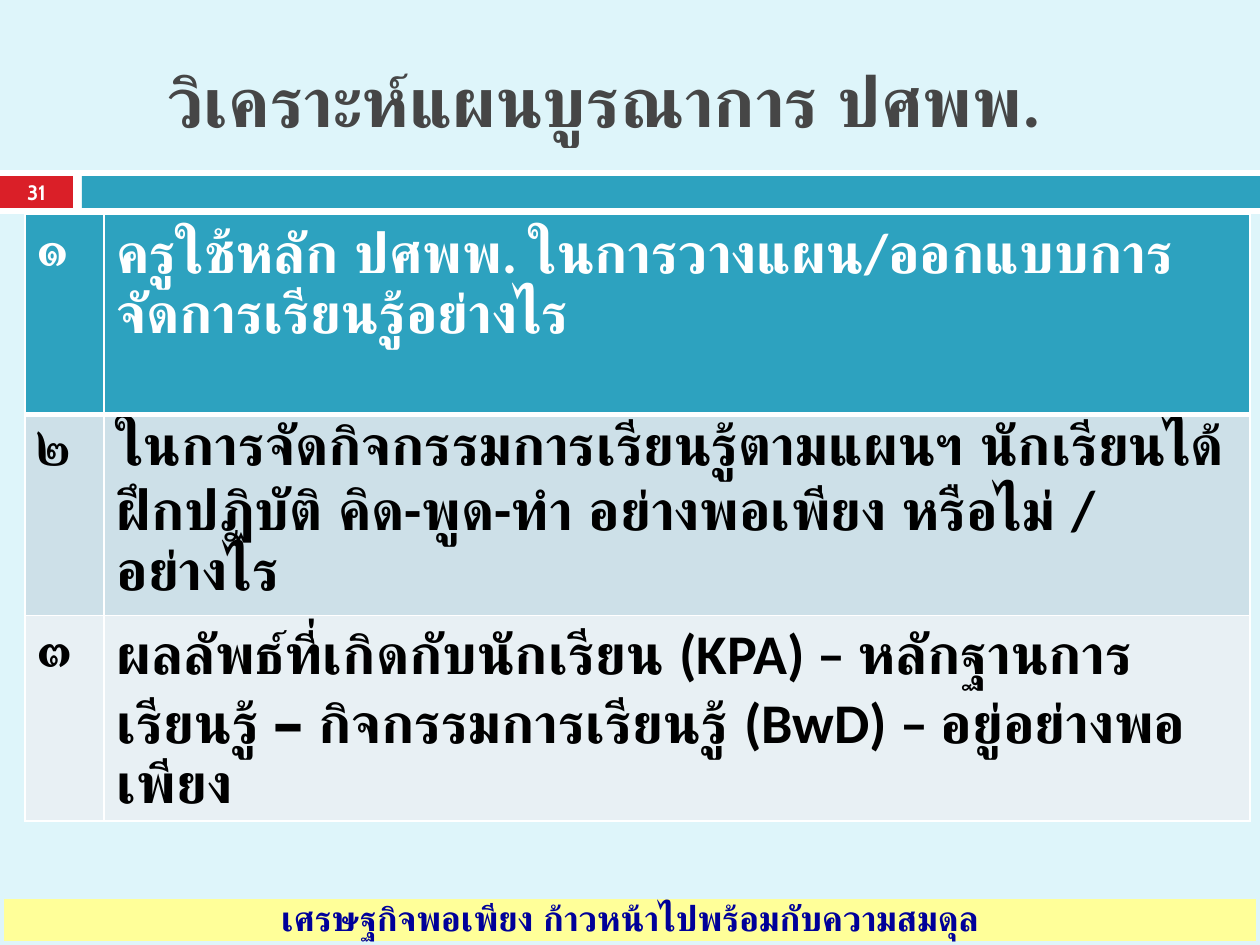
from lxml.etree import SubElement
from pptx import Presentation
from pptx.dml.color import RGBColor
from pptx.enum.shapes import MSO_SHAPE
from pptx.enum.text import MSO_ANCHOR as ANCHOR, PP_ALIGN as ALIGN
from pptx.oxml.ns import qn
from pptx.util import Emu, Pt

BACKGROUND, WHITE, BLACK = "DEF5FA", "FFFFFF", "000000"
TEAL, RED, YELLOW = "2DA2BF", "DA1F28", "FFFF99"
GREY, NAVY = "464646", "000099"

QUESTIONS = [
    ("๑", "ครูใช้หลัก ปศพพ. ในการวางแผน/ออกแบบการจัดการเรียนรู้อย่างไร"),
    ("๒", "ในการจัดกิจกรรมการเรียนรู้ตามแผนฯ นักเรียนได้ฝึกปฏิบัติ "
          "คิด-พูด-ทำ อย่างพอเพียง หรือไม่ / อย่างไร"),
    ("๓", "ผลลัพธ์ที่เกิดกับนักเรียน (KPA) – หลักฐานการเรียนรู้ – "
          "กิจกรรมการเรียนรู้ (BwD) – อยู่อย่างพอเพียง"),
]
# Fill, text colour, top and bottom border width of each row
ROW_STYLES = [(TEAL, WHITE, 1, 3), ("CDE0E8", BLACK, 3, 1), ("E8F0F4", BLACK, 1, 1)]


def px(n):
    return Emu(round(n * 914400 / 126))


def rgb(color):
    return RGBColor.from_string(color)


def write(tf, text, size, font, color, align=None):
    tf.text = text
    tf.word_wrap = True
    p = tf.paragraphs[0]
    p.alignment = align
    for r in p.runs:
        r.font.size, r.font.name, r.font.bold = Pt(size), font, True
        r.font.color.rgb = rgb(color)


def add_bar(slide, x, y, w, h, fill):
    sp = slide.shapes.add_shape(MSO_SHAPE.RECTANGLE, px(x), px(y), px(w), px(h))
    sp.shadow.inherit = False
    sp.fill.solid()
    sp.fill.fore_color.rgb = rgb(fill)
    sp.line.fill.background()
    return sp


def set_borders(cell, top, bottom):
    tc_pr = cell._tc.get_or_add_tcPr()
    sides = [("a:lnL", 1), ("a:lnR", 1), ("a:lnT", top), ("a:lnB", bottom)]
    for i, (tag, width) in enumerate(sides):
        ln = SubElement(tc_pr, qn(tag), w=str(Pt(width)))
        fill = SubElement(ln, qn("a:solidFill"))
        SubElement(fill, qn("a:srgbClr"), val=WHITE)
        tc_pr.insert(i, ln)  # borders come before the cell fill


def add_title(slide, x, y, w, h):
    title = slide.shapes.title
    title.left, title.top, title.width, title.height = px(x), px(y), px(w), px(h)
    write(title.text_frame, "วิเคราะห์แผนบูรณาการ ปศพพ.", 40, "Calibri", GREY, ALIGN.CENTER)
    title.text_frame.vertical_anchor = ANCHOR.MIDDLE


def add_number_band(slide, x, y, w, h):
    number_w, gap, margin = 73, 9, 6
    bar_h = h - 2 * margin
    add_bar(slide, x, y, w, h, WHITE)
    number = add_bar(slide, x, y + margin, number_w, bar_h, RED)
    bar_x = number_w + gap
    add_bar(slide, x + bar_x, y + margin, w - bar_x, bar_h, TEAL)
    tf = number.text_frame
    write(tf, "31", 11.9, "Cabin", WHITE, ALIGN.CENTER)
    tf.vertical_anchor = ANCHOR.MIDDLE
    tf.margin_top = tf.margin_bottom = 0


def add_questions(slide, x, y, w, h):
    number_w = 79
    frame = slide.shapes.add_table(len(QUESTIONS), 2, px(x), px(y), px(w), px(h))
    table = frame.table
    table.columns[0].width = px(number_w)
    table.columns[1].width = px(w - number_w)
    for row, texts, style in zip(table.rows, QUESTIONS, ROW_STYLES):
        fill, color, top, bottom = style
        row.height = px(h / len(QUESTIONS))
        for cell, text in zip(row.cells, texts):
            write(cell.text_frame, text, 32, "Calibri", color)
            cell.fill.solid()
            cell.fill.fore_color.rgb = rgb(fill)
            set_borders(cell, top, bottom)


def add_footer(slide, x, y, w, h):
    bar = add_bar(slide, x, y, w, h, YELLOW)
    # An edge in the background colour insets the band
    bar.line.color.rgb = rgb(BACKGROUND)
    bar.line.width = Pt(4.5)
    write(bar.text_frame, "เศรษฐกิจพอเพียง ก้าวหน้าไปพร้อมกับความสมดุล",
          20, "Roboto", NAVY, ALIGN.CENTER)
    bar.text_frame.vertical_anchor = ANCHOR.BOTTOM


def main():
    prs = Presentation()
    prs.slide_width, prs.slide_height = px(1260), px(945)
    slide = prs.slides.add_slide(prs.slide_layouts[5])
    slide.background.fill.solid()
    slide.background.fill.fore_color.rgb = rgb(BACKGROUND)

    add_number_band(slide, 0, 170, 1260, 44)
    add_footer(slide, 0, 895, 1260, 50)
    add_title(slide, 0, 32, 1208, 136)
    add_questions(slide, 25, 214, 1225, 602)
    prs.save("out.pptx")


if __name__ == "__main__":
    main()
